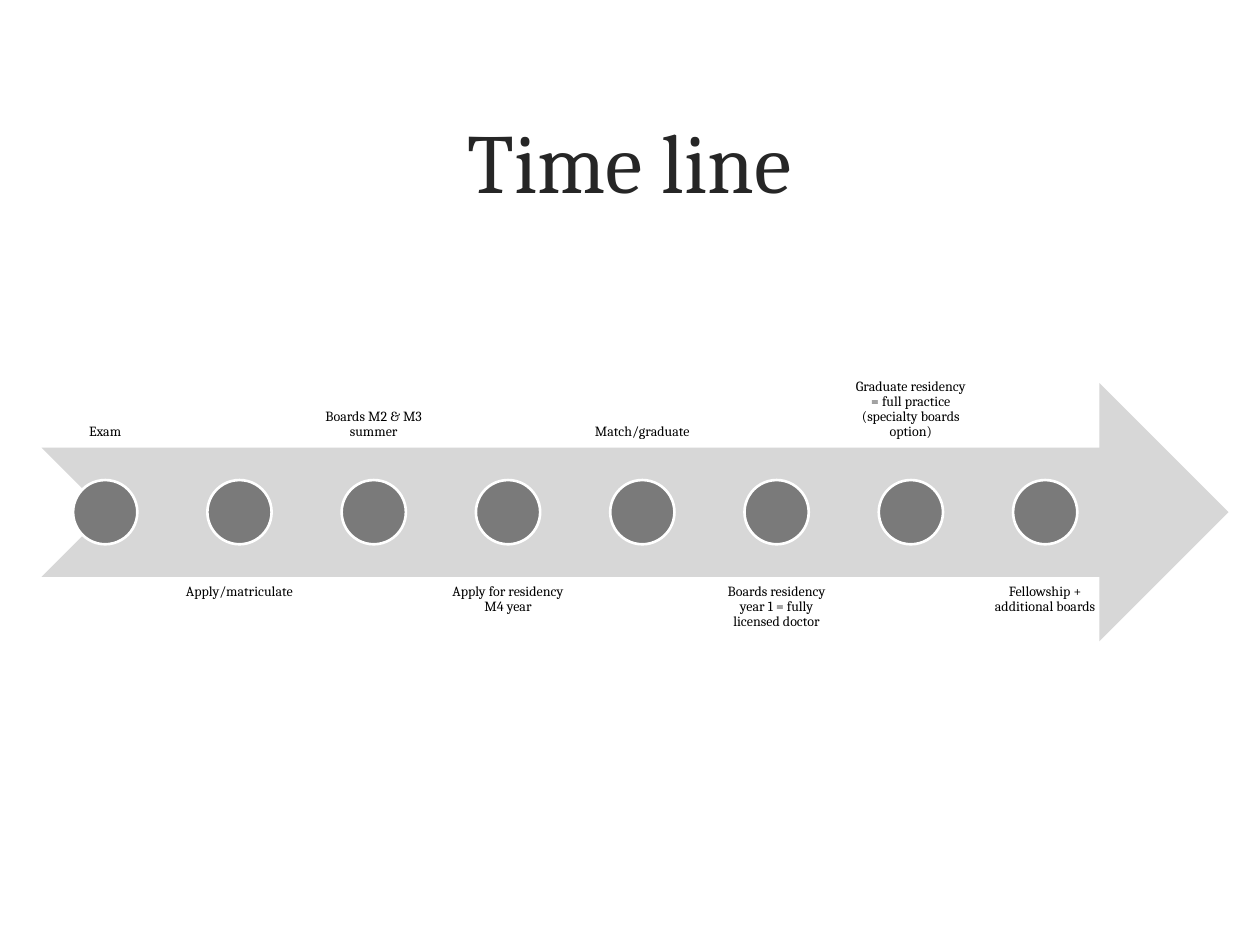
from dataclasses import dataclass

from pptx import Presentation
from pptx.dml.color import RGBColor
from pptx.enum.shapes import MSO_SHAPE
from pptx.enum.text import MSO_ANCHOR, PP_ALIGN
from pptx.util import Inches, Pt

ARROW = MSO_SHAPE.NOTCHED_RIGHT_ARROW
CIRCLE = MSO_SHAPE.OVAL
TOP, MIDDLE, BOTTOM = MSO_ANCHOR.TOP, MSO_ANCHOR.MIDDLE, MSO_ANCHOR.BOTTOM
CENTER = PP_ALIGN.CENTER


@dataclass(frozen=True)
class Theme:
    font: str = "Cambria"
    title_color: RGBColor = RGBColor(0x26, 0x26, 0x26)
    label_color: RGBColor = RGBColor(0, 0, 0)
    arrow_color: RGBColor = RGBColor(0xD7, 0xD7, 0xD7)
    marker_color: RGBColor = RGBColor(0x7A, 0x7A, 0x7A)
    outline_color: RGBColor = RGBColor(0xFF, 0xFF, 0xFF)
    title_size: Pt = Pt(48)
    label_size: Pt = Pt(8)
    outline_width: Pt = Pt(1.5)


class TimelineSlide:
    def __init__(self, slide, theme):
        self.slide = slide
        self.theme = theme

    def text(self, box, wording, size, color, anchor):
        shape = self.slide.shapes.add_textbox(*map(Inches, box))
        text_frame = shape.text_frame
        text_frame.word_wrap = True
        text_frame.vertical_anchor = anchor
        text_frame.text = wording
        paragraph = text_frame.paragraphs[0]
        paragraph.alignment = CENTER
        font = paragraph.runs[0].font
        font.name = self.theme.font
        font.size = size
        font.color.rgb = color
        return text_frame

    def title(self, box, wording):
        self.text(box, wording, self.theme.title_size, self.theme.title_color, MIDDLE)

    def label(self, box, wording, anchor):
        text_frame = self.text(box, wording, self.theme.label_size, self.theme.label_color, anchor)
        text_frame.margin_left = text_frame.margin_right = Inches(0.06)
        text_frame.margin_top = text_frame.margin_bottom = Inches(0.06)
        text_frame.paragraphs[0].line_spacing = 0.9

    def filled_shape(self, kind, box, color):
        shape = self.slide.shapes.add_shape(kind, *map(Inches, box))
        shape.shadow.inherit = False
        shape.fill.solid()
        shape.fill.fore_color.rgb = color
        shape.line.fill.background()
        return shape

    def arrow(self, box):
        self.filled_shape(ARROW, box, self.theme.arrow_color)

    def marker(self, box):
        shape = self.filled_shape(CIRCLE, box, self.theme.marker_color)
        shape.line.color.rgb = self.theme.outline_color
        shape.line.width = self.theme.outline_width


MILESTONES = [
    "Exam",
    "Apply/matriculate",
    "Boards M2 & M3 summer",
    "Apply for residency M4 year",
    "Match/graduate",
    "Boards residency year 1 = fully licensed doctor",
    "Graduate residency = full practice (specialty boards option)",
    "Fellowship + additional boards",
]


def main():
    presentation = Presentation()
    presentation.slide_width = Inches(10)
    presentation.slide_height = Inches(7.5)
    slide = presentation.slides.add_slide(presentation.slide_layouts[6])
    timeline = TimelineSlide(slide, Theme())

    left, last_left = 0.33, 7.79
    label_width, band_height, marker_size = 1.01, 2.05, 0.51
    pitch = (last_left - left) / (len(MILESTONES) - 1)

    timeline.title((0.6, 0.48, 8.79, 1.58), "Time line")
    timeline.arrow((left, 3.04, 9.42, band_height))
    for index, milestone in enumerate(MILESTONES):
        label_left = left + index * pitch
        top, anchor = (4.58, TOP) if index % 2 else (1.5, BOTTOM)
        timeline.label((label_left, top, label_width, band_height), milestone, anchor)
        marker_left = label_left + (label_width - marker_size) / 2
        timeline.marker((marker_left, 3.81, marker_size, marker_size))

    presentation.save("out.pptx")


if __name__ == "__main__":
    main()
